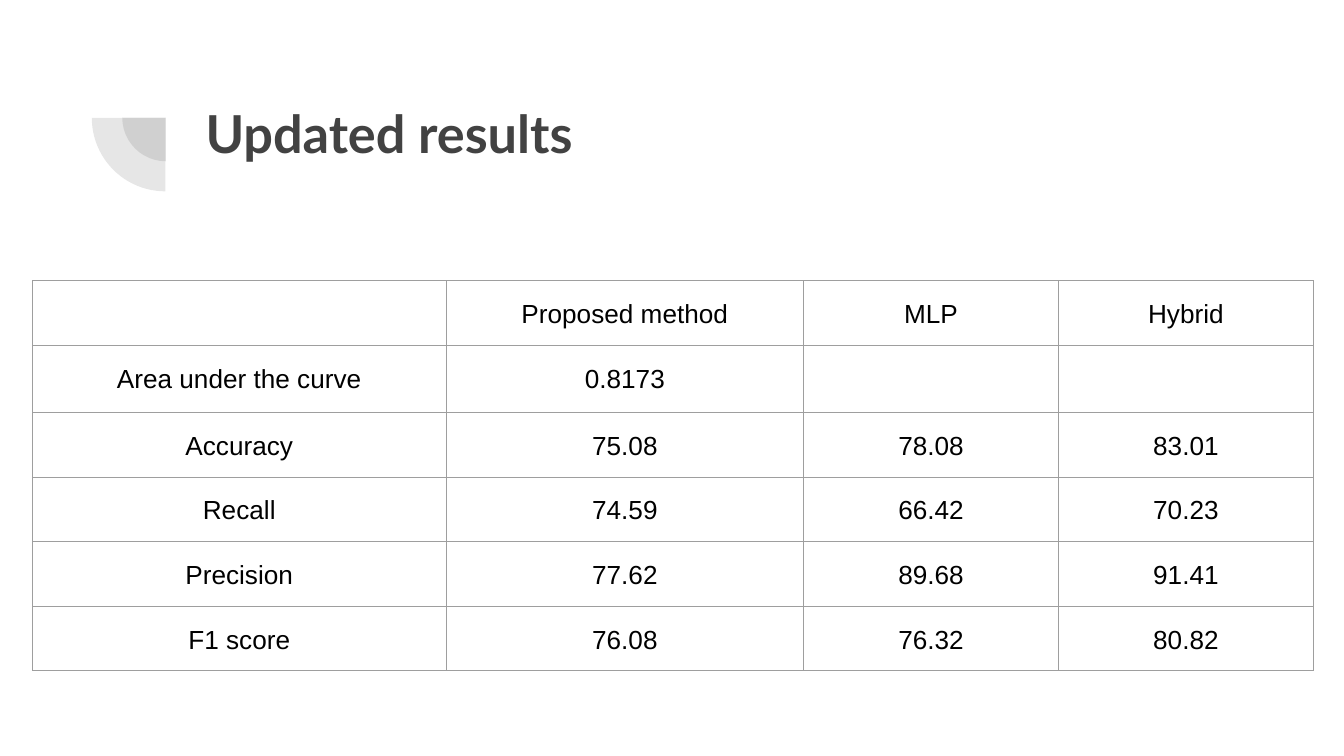
from lxml import etree
from pptx import Presentation
from pptx import util as u
from pptx.dml.color import RGBColor
from pptx.enum import shapes, text
from pptx.oxml.ns import qn

CHARCOAL = RGBColor(0x42, 0x42, 0x42)
BLACK = RGBColor(0, 0, 0)
BORDER = RGBColor(0x9E, 0x9E, 0x9E)
INSET = u.Pt(7.2)

presentation = Presentation()
presentation.slide_width = u.Pt(720)
presentation.slide_height = u.Pt(405)
slide = presentation.slides.add_slide(presentation.slide_layouts[6])

for left, top, size in [(65.5, 39.6, 46.8), (49.2, 23.7, 78.8)]:
    quarter = slide.shapes.add_shape(
        shapes.MSO_SHAPE.PIE, u.Pt(left), u.Pt(top), u.Pt(size), u.Pt(size))
    quarter.rotation = 270
    quarter.adjustments[0] = 108
    quarter.adjustments[1] = 162
    quarter.shadow.inherit = False
    quarter.line.fill.background()
    quarter.fill.solid()
    quarter.fill.fore_color.rgb = CHARCOAL
    color = quarter.fill._xPr.find(".//" + qn("a:srgbClr"))
    etree.SubElement(color, qn("a:alpha"), val="13000")

title = slide.shapes.add_textbox(u.Pt(103), u.Pt(46.8), u.Pt(553.7), u.Pt(78.5))
frame = title.text_frame
frame.word_wrap = True
frame.vertical_anchor = text.MSO_ANCHOR.TOP
frame.margin_left = frame.margin_right = INSET
frame.margin_top = frame.margin_bottom = INSET
run = frame.paragraphs[0].add_run()
run.text = "Updated results"
run.font.name = "Lato"
run.font.size = u.Pt(28)
run.font.bold = True
run.font.color.rgb = CHARCOAL

results = [
    ["", "Proposed method", "MLP", "Hybrid"],
    ["Area under the curve", "0.8173", "", ""],
    ["Accuracy", "75.08", "78.08", "83.01"],
    ["Recall", "74.59", "66.42", "70.23"],
    ["Precision", "77.62", "89.68", "91.41"],
    ["F1 score", "76.08", "76.32", "80.82"],
]
column_widths = [221.8, 191.4, 136.6, 136.6]
row_height = 30.24

table = slide.shapes.add_table(
    len(results), len(column_widths), u.Pt(17.3), u.Pt(150.3),
    u.Pt(sum(column_widths)), u.Pt(row_height * len(results))).table
table.first_row = False
table.horz_banding = False
for column, width in zip(table.columns, column_widths):
    column.width = u.Pt(width)

for row_index, values in enumerate(results):
    table.rows[row_index].height = u.Pt(row_height)
    for column_index, value in enumerate(values):
        cell = table.cell(row_index, column_index)
        cell.margin_left = cell.margin_right = INSET
        cell.margin_top = cell.margin_bottom = INSET
        paragraph = cell.text_frame.paragraphs[0]
        if value:
            paragraph.alignment = text.PP_ALIGN.CENTER
            paragraph.line_spacing = 1.2
            run = paragraph.add_run()
            run.text = value
            run.font.name = "Arial"
            run.font.size = u.Pt(14)
            run.font.color.rgb = BLACK
        else:
            end_size = "1400" if row_index == 0 else "1800"
            end = etree.SubElement(paragraph._p, qn("a:endParaRPr"), sz=end_size)
            etree.SubElement(end, qn("a:latin"), typeface="Arial")
        properties = cell._tc.get_or_add_tcPr()
        for side in ["lnL", "lnR", "lnT", "lnB"]:
            line = etree.SubElement(properties, qn("a:" + side), w=str(u.Pt(0.38)))
            fill = etree.SubElement(line, qn("a:solidFill"))
            etree.SubElement(fill, qn("a:srgbClr"), val=str(BORDER))
        cell.fill.background()

presentation.save("out.pptx")
